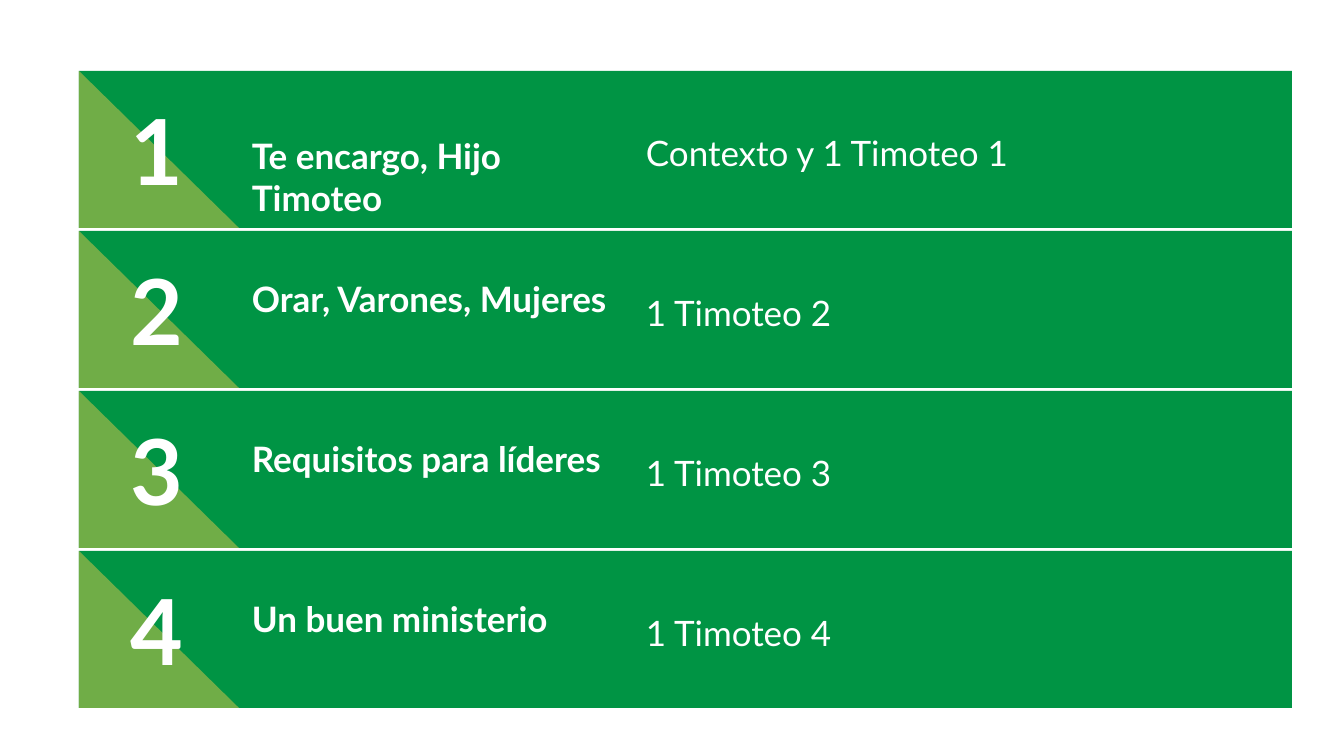
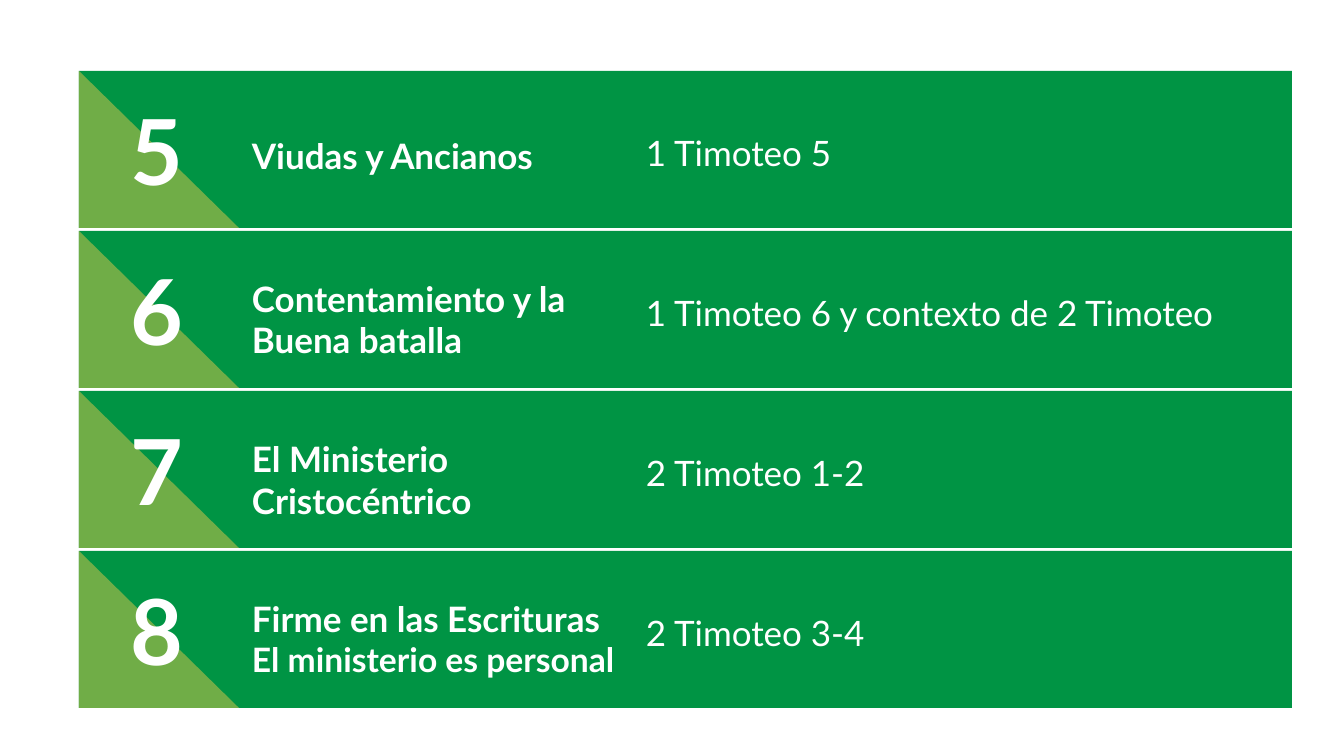
import pptx
import pptx.dml.color
import pptx.enum.shapes
import pptx.enum.text
import pptx.util

SCALE = 914400 / 100.8
FONT = "Lato"
WHITE = "FFFFFF"
GREEN = "009444"
LIGHT_GREEN = "70AD47"

LEFT, SPLIT, RIGHT = 79, 633, 1292
TOP, PITCH, ROW_HEIGHT = 71, 160, 157
CORNER_WIDTH = 160
INSET = 13
PASSAGE_INSET = 61

SHAPES = pptx.enum.shapes.MSO_SHAPE
ANCHOR = pptx.enum.text.MSO_ANCHOR
ALIGN = pptx.enum.text.PP_ALIGN

LESSONS = [
    [
        (["Te encargo, Hijo Timoteo"], "Contexto y 1 Timoteo 1"),
        (["Orar, Varones, Mujeres"], "1 Timoteo 2"),
        (["Requisitos para líderes"], "1 Timoteo 3"),
        (["Un buen ministerio"], "1 Timoteo 4"),
    ],
    [
        (["Viudas y Ancianos"], "1 Timoteo 5"),
        (["Contentamiento y la Buena batalla"], "1 Timoteo 6 y contexto de 2 Timoteo"),
        (["El Ministerio Cristocéntrico"], "2 Timoteo 1-2"),
        (["Firme en las Escrituras", "El ministerio es personal"], "2 Timoteo 3-4"),
    ],
]


def px(length):
    return pptx.util.Emu(round(length * SCALE))


def color(value):
    return pptx.dml.color.RGBColor.from_string(value)


def box(left, top, width, height):
    return px(left), px(top), px(width), px(height)


def add_block(slide, kind, place, fill):
    shape = slide.shapes.add_shape(kind, *box(*place))
    shape.shadow.inherit = False
    shape.fill.solid()
    shape.fill.fore_color.rgb = color(fill)
    shape.line.fill.background()
    return shape


def write(shape, lines, sizes, bold=False, align=ALIGN.LEFT, anchor=ANCHOR.TOP, top_inset=INSET):
    frame = shape.text_frame
    frame.word_wrap = True
    frame.vertical_anchor = anchor
    frame.margin_left = frame.margin_right = frame.margin_bottom = px(INSET)
    frame.margin_top = px(top_inset)
    frame.text = "\n".join(lines)
    for paragraph, size in zip(frame.paragraphs, sizes):
        paragraph.alignment = align
        for run in paragraph.runs:
            run.font.name = FONT
            run.font.size = pptx.util.Pt(size)
            run.font.bold = bold
            run.font.color.rgb = color(WHITE)


def add_text(slide, place, lines, sizes, **style):
    write(slide.shapes.add_textbox(*box(*place)), lines, sizes, bold=True, **style)


def add_lesson(slide, row, number, title, passage):
    top = TOP + row * PITCH
    title_offset, title_height = (50, 109) if row == 0 else (33, 96)
    title_left = LEFT + CORNER_WIDTH

    passage_block = add_block(
        slide, SHAPES.RECTANGLE, (SPLIT, top, RIGHT - SPLIT, ROW_HEIGHT), GREEN)
    write(passage_block, [passage], [25], top_inset=PASSAGE_INSET)
    add_block(slide, SHAPES.RECTANGLE, (LEFT, top, SPLIT - LEFT, ROW_HEIGHT), GREEN)
    add_block(slide, SHAPES.RIGHT_TRIANGLE, (LEFT, top, CORNER_WIDTH, ROW_HEIGHT), LIGHT_GREEN)
    add_text(slide, (107, top + 50, 99, 96), [str(number)], [65],
             align=ALIGN.CENTER, anchor=ANCHOR.BOTTOM)
    add_text(slide, (title_left, top + title_offset, SPLIT - title_left, title_height),
             title, [25, 24])


def main():
    presentation = pptx.Presentation()
    presentation.slide_width = px(1344)
    presentation.slide_height = px(756)
    number = 1
    for lessons in LESSONS:
        slide = presentation.slides.add_slide(presentation.slide_layouts[6])
        for row, (title, passage) in enumerate(lessons):
            add_lesson(slide, row, number, title, passage)
            number += 1
    presentation.save("out.pptx")


if __name__ == "__main__":
    main()
